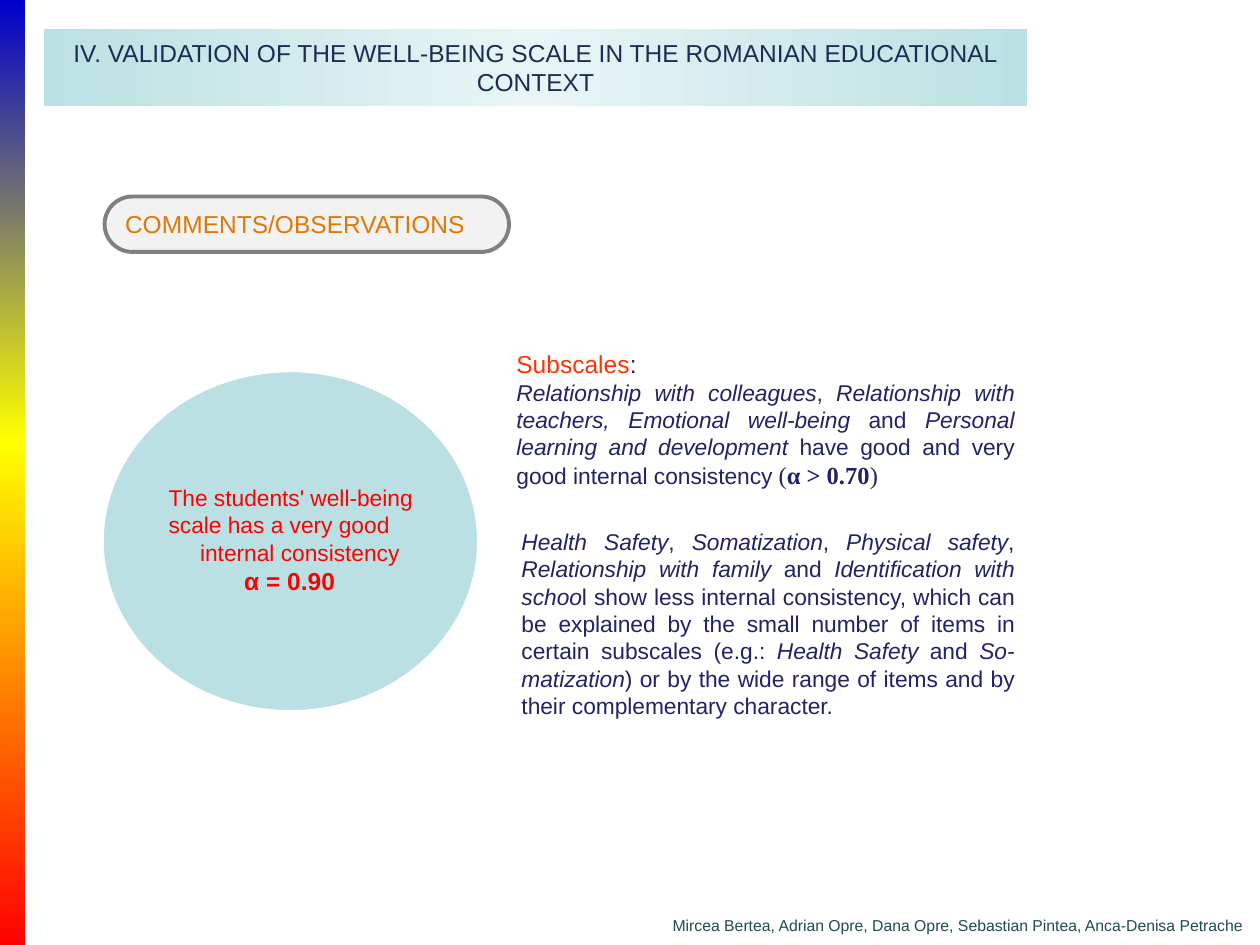
from copy import deepcopy

from pptx import Presentation
from pptx import util as u
from pptx.dml.color import RGBColor
from pptx.enum import shapes, text
from pptx.oxml.ns import qn

BLUE = RGBColor(0x00, 0x00, 0xCC)
YELLOW = RGBColor(0xFF, 0xFF, 0x00)
RED = RGBColor(0xFF, 0x00, 0x00)
AQUA = RGBColor(0xBB, 0xE0, 0xE3)
PALE = RGBColor(0xE8, 0xF5, 0xF6)
WHITE = RGBColor(0xFF, 0xFF, 0xFF)
LIGHT = RGBColor(0xF2, 0xF2, 0xF2)
GRAY = RGBColor(0x80, 0x80, 0x80)
NAVY = RGBColor(0x1B, 0x2D, 0x55)
INDIGO = RGBColor(0x22, 0x22, 0x67)
ORANGE = RGBColor(0xDF, 0x78, 0x07)
CORAL = RGBColor(0xFF, 0x33, 0x00)
TEAL = RGBColor(0x22, 0x4B, 0x50)
KIND = shapes.MSO_SHAPE
ALIGN = text.PP_ALIGN
SERIF = "Times New Roman"


def lengths(box):
    return [u.Inches(v) for v in box]


def add_run(para, words, color, size=13, bold=False, italic=False, face="Arial"):
    run = para.add_run()
    run.text = words
    font = run.font
    font.name, font.size = face, u.Pt(size)
    font.bold, font.italic = bold, italic
    font.color.rgb = color


def add_para(frame, runs, color, align=ALIGN.LEFT, indent=0):
    para = frame.paragraphs[0]
    if para.runs:
        para = frame.add_paragraph()
    para.alignment = align
    if indent:
        para._p.get_or_add_pPr().set("marL", str(u.Inches(indent)))
    for words, style in runs:
        add_run(para, words, **{"color": color, **style})


def add_box(slide, box, wrap=True):
    frame = slide.shapes.add_textbox(*lengths(box)).text_frame
    frame.word_wrap = wrap
    return frame


def add_shape(slide, kind, box):
    shape = slide.shapes.add_shape(kind, *lengths(box))
    shape.shadow.inherit = False
    shape.line.fill.background()
    return shape


def blend(shape, colors, angle=0):
    fill = shape.fill
    fill.gradient()
    fill.gradient_angle = angle
    stops = shape._element.spPr.find(".//" + qn("a:gsLst"))
    while len(stops) < len(colors):
        stops.append(deepcopy(stops[-1]))
    for i, (stop, color) in enumerate(zip(fill.gradient_stops, colors)):
        stop.color.rgb = color
        stop.position = i / (len(colors) - 1)


def add_stripe(slide, box):
    left, top, width, height = box
    split = 3.51
    parts = [(top, split, BLUE, YELLOW), (top + split, height - split, YELLOW, RED)]
    for start, tall, first, last in parts:
        shape = add_shape(slide, KIND.RECTANGLE, (left, start, width, tall))
        blend(shape, [first, last], 270)


def add_title(slide, box):
    title = slide.shapes.title
    title.left, title.top, title.width, title.height = lengths(box)
    blend(title, [AQUA, PALE, AQUA])
    frame = title.text_frame
    frame.auto_size = text.MSO_AUTO_SIZE.NONE
    frame.vertical_anchor = text.MSO_ANCHOR.MIDDLE
    words = "IV. VALIDATION OF THE WELL-BEING SCALE IN THE ROMANIAN EDUCATIONAL CONTEXT"
    add_para(frame, [(words, {"size": 14})], NAVY, ALIGN.CENTER)


def add_label(slide, box):
    pill = add_shape(slide, KIND.ROUNDED_RECTANGLE, box)
    pill.adjustments[0] = 0.5
    pill.fill.solid()
    pill.fill.fore_color.rgb = LIGHT
    pill.line.color.rgb = GRAY
    pill.line.width = u.Pt(2.25)
    frame = pill.text_frame
    frame.vertical_anchor = text.MSO_ANCHOR.MIDDLE
    add_para(frame, [("COMMENTS/OBSERVATIONS", {"size": 14})], ORANGE)


def add_result(slide, box):
    left, top, width, height = box
    oval = add_shape(slide, KIND.OVAL, box)
    oval.fill.solid()
    oval.fill.fore_color.rgb = AQUA
    oval.line.color.rgb = WHITE
    oval.line.width = u.Pt(2)
    frame = add_box(slide, (left + 0.43, top + 0.85, 2.37, 0.99))
    lines = [
        ("The students' well-being", {}, 0),
        ("scale has a very good", {}, 0),
        ("internal consistency", {}, 0.25),
        ("α = 0.90", {"size": 14, "bold": True}, 0.6),
    ]
    for words, style, indent in lines:
        add_para(frame, [(words, style)], RED, indent=indent)


def add_notes(slide, box):
    left, top, width, height = box
    slant = {"italic": True}
    serif = {"size": 14, "face": SERIF}
    head = [("Subscales", {"size": 14, "color": CORAL}), (":", {"size": 14})]
    good = [
        ("Relationship with colleagues", slant),
        (", ", {}),
        ("Relationship with teachers, Emotional well-being ", slant),
        ("and ", {}),
        ("Personal learning and development", slant),
        (" have good and very good internal consistency ", {}),
        ("(", serif),
        ("α > 0.70", {**serif, "bold": True}),
        (")", serif),
    ]
    less = [
        ("Health Safety", slant),
        (", ", {}),
        ("Somatization", slant),
        (", ", {}),
        ("Physical safety", slant),
        (", ", {}),
        ("Relationship with family ", slant),
        ("and ", {}),
        ("Identification with schoo", slant),
        ("l show less internal consistency, which can be explained by the small "
         "number of items in certain subscales (e.g.: ", {}),
        ("Health Safety ", slant),
        ("and ", {}),
        ("So-matization", slant),
        (") or by the wide range of items and by their complementary character.", {}),
    ]
    upper = add_box(slide, (left, top, width, 1.23))
    for runs in (head, good):
        add_para(upper, runs, INDIGO, ALIGN.JUSTIFY)
    lower = add_box(slide, (left + 0.04, top + 1.42, width - 0.04, height - 1.42))
    add_para(lower, less, INDIGO, ALIGN.JUSTIFY)


def add_names(slide, box):
    frame = add_box(slide, box, wrap=False)
    words = "Mircea Bertea, Adrian Opre, Dana Opre, Sebastian Pintea, Anca-Denisa Petrache"
    add_para(frame, [(words, {"size": 9})], TEAL)


def main():
    deck = Presentation()
    deck.slide_width, deck.slide_height = u.Inches(10), u.Inches(7.5)
    slide = deck.slides.add_slide(deck.slide_layouts[5])
    add_stripe(slide, (0, 0, 0.2, 7.5))
    add_title(slide, (0.35, 0.23, 7.8, 0.61))
    add_label(slide, (0.83, 1.56, 3.21, 0.44))
    add_result(slide, (0.81, 2.94, 2.99, 2.71))
    add_notes(slide, (4, 2.72, 4.15, 3.05))
    add_names(slide, (5.24, 7.22, 4.76, 0.25))
    deck.save("out.pptx")


if __name__ == "__main__":
    main()
